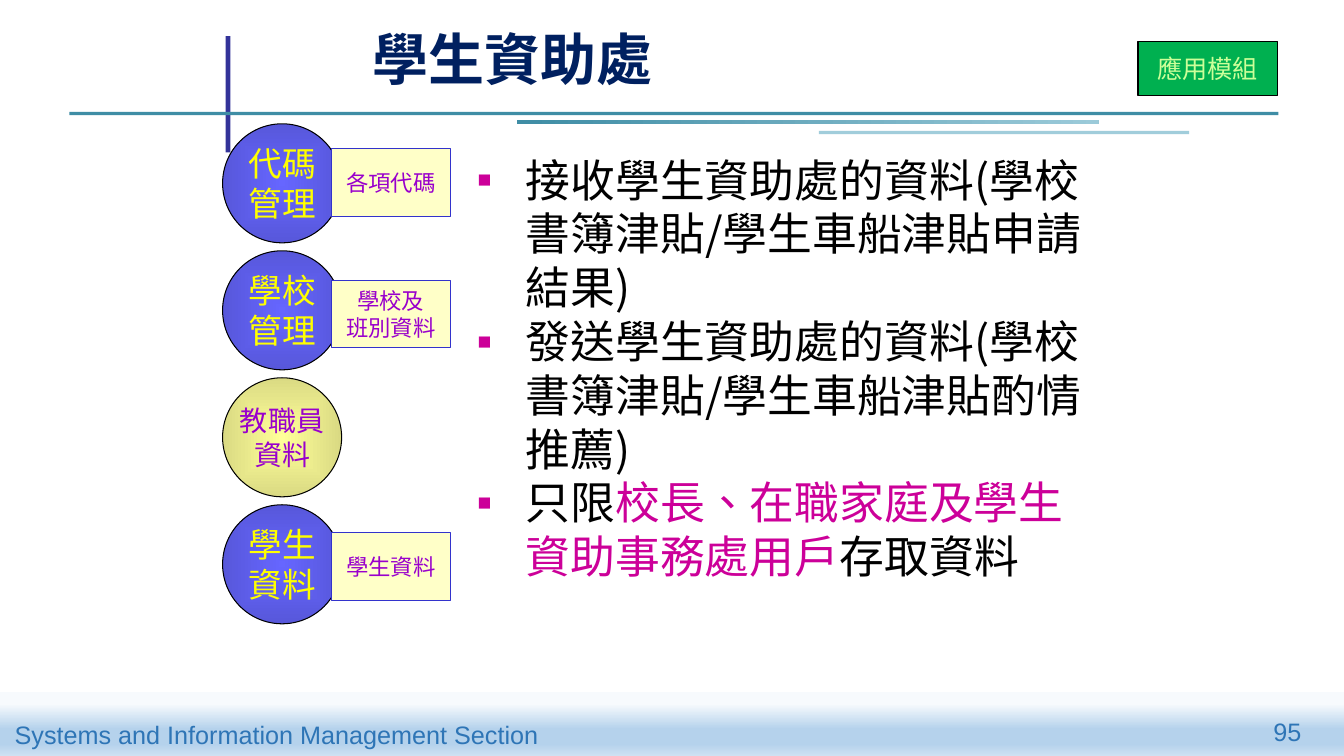
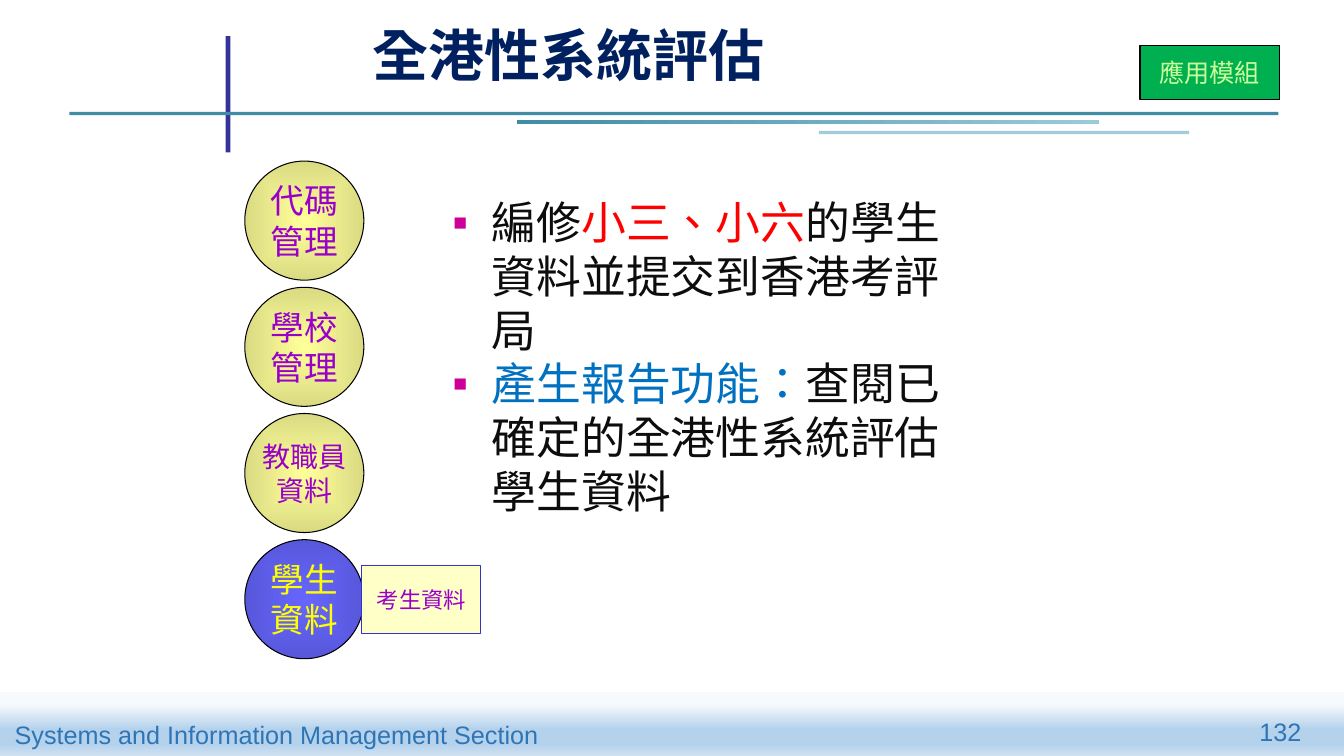
import lxml.etree
import pptx
import pptx.dml.color
import pptx.enum.lang
import pptx.enum.shapes
import pptx.enum.text
import pptx.oxml.ns
import pptx.util

Cm, Pt = pptx.util.Cm, pptx.util.Pt
ALIGN = pptx.enum.text.PP_ALIGN
ANCHOR = pptx.enum.text.MSO_ANCHOR
SHAPE = pptx.enum.shapes.MSO_SHAPE
qn = pptx.oxml.ns.qn

CJK, LATIN = "Noto Sans CJK SC", "Arial"
LINE_HEIGHT = 1.2
CIRCLE = 3.0
CARD_WIDTH, CARD_HEIGHT = 3.0, 1.7

COLORS = {
    "black": "000000", "white": "FFFFFF", "ink": "0D0D0D", "navy": "002060",
    "footer": "2E75B6", "upright": "333399", "rule": "3F8DA5",
    "rule_end": "9BCAD9", "rule_pale": "A1CDDB",
    "band_top": "F7FAFD", "band": "B5D2EC", "band_bottom": "CEE1F2",
    "blue_center": "6666FF", "blue_edge": "5757DA",
    "cream_center": "FFFF99", "cream_edge": "DADA83",
    "yellow": "FFFF00", "purple": "9900CC", "card": "FFFFC8",
    "card_line": "3333CC", "badge": "00B050", "badge_text": "CCFF99",
    "magenta": "CC0099", "red": "FF0000", "azure": "0070C0",
}

TITLE = {"name": CJK, "size": 40, "bold": True}
BODY = {"name": CJK, "size": 32}
CARD = {"name": CJK, "size": 16}
BADGE = {"name": CJK, "size": 18}
FOOTER = {"name": LATIN, "size": 18}

# Each module: lines, text size, active, card lines, drop of the card
SLIDES = [
    {
        "title": "學生資助處", "title_box": (9.14, 0.33, 12.73, 2.11),
        "number": "95", "badge_at": (28.68, 1.04),
        "column": (5.61, 3.12), "step": 3.2, "card_offset": 2.74,
        "modules": [
            (["代碼", "管理"], 24, True, ["各項代碼"], 0.63),
            (["學校", "管理"], 24, True, ["學校及", "班別資料"], 0.74),
            (["教職員", "資料"], 20, False, None, 0),
            (["學生", "資料"], 24, True, ["學生資料"], 0.71),
        ],
        "body_box": (11.76, 3.71, 15.77, 13.16), "indent": 1.24,
        "body_fill": "white",
        "body": [
            [("接收學生資助處的資料(學校書簿津貼/學生車船津貼申請結果)", "black")],
            [("發送學生資助處的資料(學校書簿津貼/學生車船津貼酌情推薦)", "black")],
            [("只限", "black"), ("校長、在職家庭及學生資助事務處用戶", "magenta"),
             ("存取資料", "black")],
        ],
    },
    {
        "title": "全港性系統評估", "title_box": (9.14, 0.13, 20.5, 2.21),
        "number": "132", "badge_at": (28.73, 1.14),
        "column": (6.17, 4.06), "step": 3.18, "card_offset": 2.95,
        "modules": [
            (["代碼", "管理"], 24, False, None, 0),
            (["學校", "管理"], 24, False, None, 0),
            (["教職員", "資料"], 20, False, None, 0),
            (["學生", "資料"], 24, True, ["考生資料"], 0.66),
        ],
        "body_box": (11.15, 4.78, 13.56, 8.46), "indent": 0.99,
        "body_fill": None,
        "body": [
            [("編修", "ink"), ("小三、小六", "red"),
             ("的學生資料並提交到香港考評局", "ink")],
            [("產生報告功能：", "azure"),
             ("查閱已確定的全港性系統評估學生資料", "ink")],
        ],
    },
]


def rgb(color):
    return pptx.dml.color.RGBColor.from_string(COLORS[color])


def lengths(box):
    return [Cm(value) for value in box]


def set_gradient(shape, stops, angle=None):
    """Fill along an angle in degrees, or from the centre outwards if none is given."""
    shape.fill.gradient()
    gradient = shape._element.spPr.find(qn("a:gradFill"))
    for child in list(gradient):
        gradient.remove(child)
    stop_list = lxml.etree.SubElement(gradient, qn("a:gsLst"))
    for position, color in stops:
        stop = lxml.etree.SubElement(stop_list, qn("a:gs"), pos=str(position * 1000))
        lxml.etree.SubElement(stop, qn("a:srgbClr"), val=COLORS[color])
    if angle is None:
        center = lxml.etree.SubElement(gradient, qn("a:path"), {"path": "shape"})
        sides = dict.fromkeys("ltrb", "50000")
        lxml.etree.SubElement(center, qn("a:fillToRect"), sides)
    else:
        lxml.etree.SubElement(gradient, qn("a:lin"), ang=str(angle * 60000), scaled="0")


def add_shape(slide, kind, box, fill=None, line=None):
    shape = slide.shapes.add_shape(kind, *lengths(box))
    shape.shadow.inherit = False
    if fill:
        shape.fill.solid()
        shape.fill.fore_color.rgb = rgb(fill)
    if line:
        shape.line.color.rgb = rgb(line)
        shape.line.width = Pt(0.75)
    else:
        shape.line.fill.background()
    return shape


def add_bullet(paragraph, indent):
    properties = paragraph._p.get_or_add_pPr()
    properties.set("marL", str(Cm(indent)))
    properties.set("indent", str(-Cm(indent)))
    color = lxml.etree.SubElement(properties, qn("a:buClr"))
    lxml.etree.SubElement(color, qn("a:srgbClr"), val=COLORS["magenta"])
    lxml.etree.SubElement(properties, qn("a:buSzPct"), val="100000")
    lxml.etree.SubElement(properties, qn("a:buFont"), typeface=LATIN)
    lxml.etree.SubElement(properties, qn("a:buChar"), char="▪")


def format_run(run, style, color):
    for name, value in style.items():
        setattr(run.font, name, Pt(value) if name == "size" else value)
    run.font.color.rgb = rgb(color)
    if style["name"] == CJK:
        run.font.language_id = pptx.enum.lang.MSO_LANGUAGE_ID.TRADITIONAL_CHINESE
        properties = run._r.get_or_add_rPr()
        lxml.etree.SubElement(properties, qn("a:ea"), typeface=CJK)


def write_text(shape, paragraphs, style, alignment=ALIGN.LEFT,
               anchor=ANCHOR.TOP, wrap=True, indent=None):
    """Write paragraphs, each a list of (text, color) runs."""
    frame = shape.text_frame
    frame_format = {
        "word_wrap": wrap, "vertical_anchor": anchor,
        "auto_size": pptx.enum.text.MSO_AUTO_SIZE.NONE,
        "margin_left": Cm(0.25), "margin_right": Cm(0.25),
        "margin_top": Cm(0.13), "margin_bottom": Cm(0.13),
    }
    for name, value in frame_format.items():
        setattr(frame, name, value)
    for index, runs in enumerate(paragraphs):
        paragraph = frame.add_paragraph() if index else frame.paragraphs[0]
        paragraph.alignment = alignment
        if style["name"] == CJK:
            paragraph.line_spacing = Pt(style["size"] * LINE_HEIGHT)
        if indent:
            add_bullet(paragraph, indent)
        for text, color in runs:
            run = paragraph.add_run()
            run.text = text
            format_run(run, style, color)


def write_label(shape, lines, style, color):
    """Centre lines of one color in a shape."""
    write_text(shape, [[(line, color)] for line in lines], style,
               ALIGN.CENTER, ANCHOR.MIDDLE, wrap=False)


def add_text(slide, box, paragraphs, style, **options):
    text_box = slide.shapes.add_textbox(*lengths(box))
    write_text(text_box, paragraphs, style, **options)
    return text_box


def build_frame(slide, layout):
    """Draw the bands, rules and footer, then hand them to the shared layout."""
    band = add_shape(slide, SHAPE.RECTANGLE, (0, 17.45, 33.87, 1.6))
    set_gradient(band, [(18, "band_top"), (58, "band"), (81, "band"),
                        (100, "band_bottom")], 90)
    upright = add_shape(slide, SHAPE.RECTANGLE, (5.69, 0.91, 0.12, 2.93), "upright")
    long_rule = add_shape(slide, SHAPE.RECTANGLE, (1.75, 2.82, 30.47, 0.08), "rule")
    middle_rule = add_shape(slide, SHAPE.RECTANGLE, (13.03, 3.02, 14.66, 0.1))
    set_gradient(middle_rule, [(0, "rule"), (100, "rule_end")], 0)
    short_rule = add_shape(slide, SHAPE.RECTANGLE, (20.64, 3.3, 9.33, 0.08), "rule_pale")
    section = add_text(slide, (0.12, 18, 13.84, 1.02),
                       [[("Systems and Information Management Section", "footer")]],
                       FOOTER, wrap=False)
    parts = (band, upright, long_rule, middle_rule, short_rule, section)
    for number, shape in enumerate(parts, 100):
        shape._element.nvSpPr.cNvPr.set("id", str(number))
        layout.shapes._spTree.append(shape._element)


def add_title(slide, box, text):
    title = slide.shapes.title
    title.left, title.top, title.width, title.height = lengths(box)
    write_text(title, [[(text, "navy")]], TITLE, anchor=ANCHOR.BOTTOM)


def add_badge(slide, left, top):
    badge = add_shape(slide, SHAPE.RECTANGLE, (left, top, 3.51, 1.36), "badge", "black")
    write_label(badge, ["應用模組"], BADGE, "badge_text")


def add_modules(slide, left, top, step, card_offset, modules):
    """Stack the module circles, each with its card if it has one."""
    for index, (lines, size, active, card_lines, drop) in enumerate(modules):
        circle_top = top + index * step
        tone, color = ("blue", "yellow") if active else ("cream", "purple")
        circle = add_shape(slide, SHAPE.OVAL, (left, circle_top, CIRCLE, CIRCLE),
                           line="black")
        set_gradient(circle, [(0, tone + "_center"), (100, tone + "_edge")])
        write_label(circle, lines, {"name": CJK, "size": size}, color)
        if card_lines:
            box = (left + card_offset, circle_top + drop, CARD_WIDTH, CARD_HEIGHT)
            card = add_shape(slide, SHAPE.RECTANGLE, box, "card", "card_line")
            write_label(card, card_lines, CARD, "purple")


def add_body(slide, box, paragraphs, indent, fill):
    body = add_text(slide, box, paragraphs, BODY, indent=indent)
    if fill:
        body.fill.solid()
        body.fill.fore_color.rgb = rgb(fill)


def build_slide(slide, content):
    add_title(slide, content["title_box"], content["title"])
    add_badge(slide, *content["badge_at"])
    add_modules(slide, *content["column"], content["step"],
                content["card_offset"], content["modules"])
    add_body(slide, content["body_box"], content["body"], content["indent"],
             content["body_fill"])
    add_text(slide, (29.72, 17.93, 3.33, 1.1), [[(content["number"], "footer")]],
             FOOTER, alignment=ALIGN.RIGHT)


def main():
    presentation = pptx.Presentation()
    presentation.slide_width, presentation.slide_height = Cm(33.87), Cm(19.05)
    layout = presentation.slide_layouts[5]
    for index, content in enumerate(SLIDES):
        slide = presentation.slides.add_slide(layout)
        if index == 0:
            build_frame(slide, layout)
        build_slide(slide, content)
    presentation.save("out.pptx")


if __name__ == "__main__":
    main()
